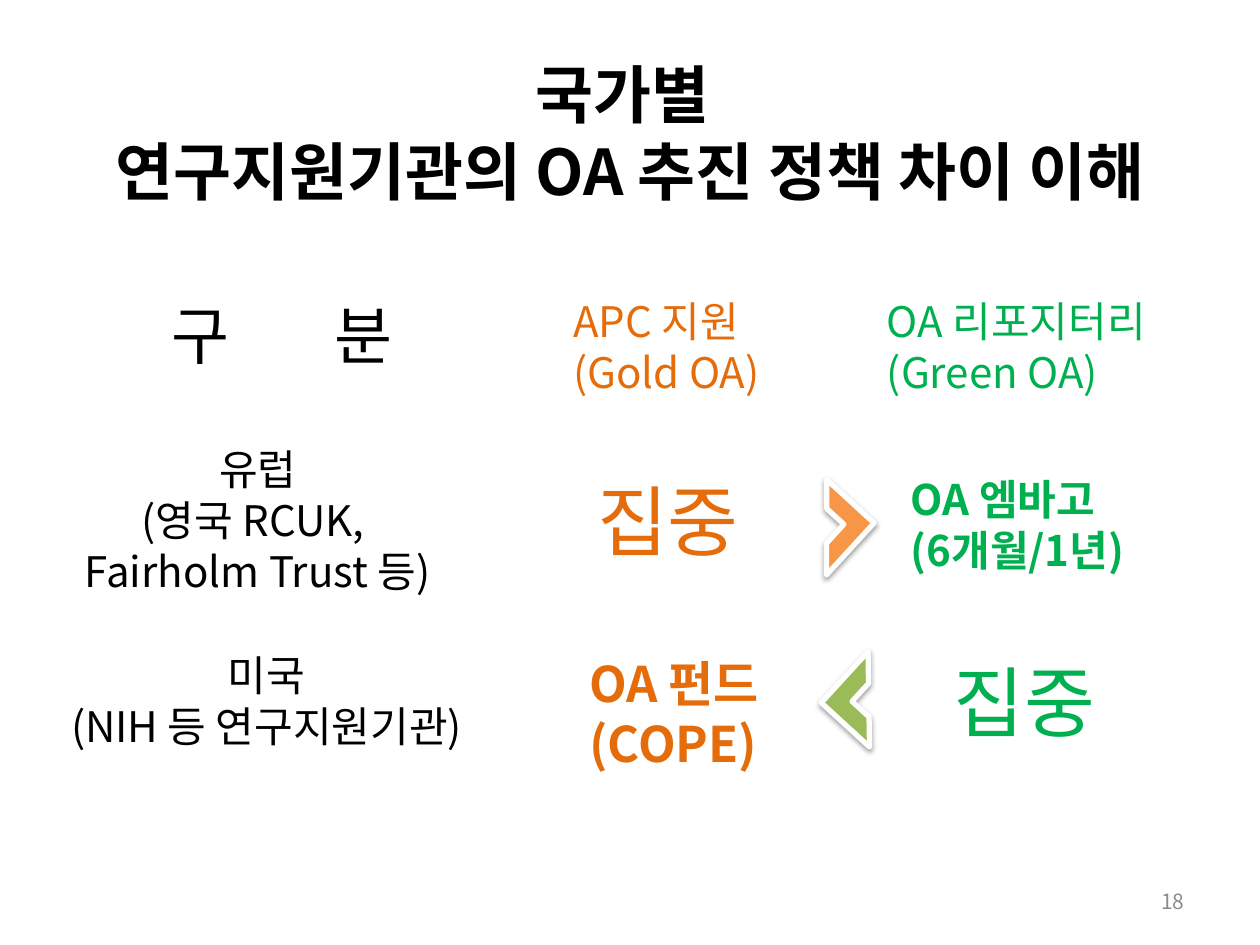
from dataclasses import dataclass

from lxml import etree
from pptx import Presentation
from pptx.dml.color import RGBColor
from pptx.enum import shapes, text
from pptx.oxml import ns
from pptx.util import Inches, Pt

FONT = "Noto Sans CJK KR"
LINE_HEIGHT = 1.22
COLORS = {
    "black": "000000",
    "gray": "8C8C8C",
    "gold": "E46C0A",
    "green": "00B050",
    "gold_arrow": "F79646",
    "green_arrow": "9BBB59",
    "white": "FFFFFF",
}
ALIGN = text.PP_ALIGN
ANCHOR = text.MSO_ANCHOR
HEADER_TOP, EUROPE_TOP, USA_TOP = 2.29, 3.7, 5.13


@dataclass
class Label:
    """A text box; each line is one paragraph."""

    box: tuple[float, float, float, float]
    lines: tuple[str, ...]
    color: str = "black"
    size: int = 24
    bold: bool = False
    align: ALIGN = ALIGN.LEFT
    anchor: ANCHOR = ANCHOR.TOP
    spacing: int = 0


@dataclass
class Chevron:
    """A rotated half frame that points to the favoured policy."""

    box: tuple[float, float, float, float]
    rotation: float
    color: str


LABELS = [
    Label((0, 0.3, 10, 1.48), ("국가별 \v연구지원기관의 OA 추진 정책 차이 이해",),
          size=36, bold=True, align=ALIGN.CENTER, anchor=ANCHOR.MIDDLE),
    Label((7.17, 6.95, 2.33, 0.4), ("18",), "gray", 12,
          align=ALIGN.RIGHT, anchor=ANCHOR.MIDDLE),
    Label((1.13, HEADER_TOP, 2.22, 0.71), ("구 분",), size=36,
          align=ALIGN.CENTER, spacing=26),
    Label((4.45, HEADER_TOP, 2.03, 0.91), ("APC 지원", "(Gold OA)"), "gold"),
    Label((6.94, HEADER_TOP, 2.54, 0.91), ("OA 리포지터리", "(Green OA)"), "green"),
    Label((0.22, 3.46, 3.65, 1.31), ("유럽", "(영국 RCUK, ", "Fairholm Trust 등)"),
          align=ALIGN.CENTER),
    Label((4.64, EUROPE_TOP, 1.64, 0.84), ("집중",), "gold", 44),
    Label((7.13, EUROPE_TOP, 1.99, 0.91), ("OA 엠바고", "(6개월/1년)"), "green", bold=True),
    Label((0.24, 5.1, 3.75, 0.91), ("미국", "(NIH 등 연구지원기관)"), align=ALIGN.CENTER),
    Label((4.58, USA_TOP, 1.7, 1.04), ("OA 펀드", "(COPE)"), "gold", 28, True),
    Label((7.47, USA_TOP, 1.55, 0.84), ("집중",), "green", 44),
]
CHEVRONS = [
    Chevron((6.28, 3.93, 0.56, 0.51), 132.5, "gold_arrow"),
    Chevron((6.62, 5.29, 0.55, 0.52), 312.5, "green_arrow"),
]


def rgb(name: str) -> RGBColor:
    """Return a named colour."""
    return RGBColor.from_string(COLORS[name])


def apply_format(target: object, values: dict) -> None:
    """Set each format value on the target."""
    for name, value in values.items():
        setattr(target, name, value)


def format_run(run, label: Label) -> None:
    """Give a run its font, size and colour."""
    apply_format(run.font, {"name": FONT, "size": Pt(label.size), "bold": label.bold})
    run.font.color.rgb = rgb(label.color)
    properties = run.font._element
    etree.SubElement(properties, ns.qn("a:ea"), typeface=FONT)


def draw_label(slide, label: Label) -> None:
    """Draw one text box."""
    frame = slide.shapes.add_textbox(*map(Inches, label.box)).text_frame
    apply_format(frame, {"word_wrap": True, "vertical_anchor": label.anchor})
    for index, line in enumerate(label.lines):
        paragraph = frame.paragraphs[0] if index == 0 else frame.add_paragraph()
        apply_format(paragraph, {
            "alignment": label.align,
            "line_spacing": Pt(label.size * LINE_HEIGHT),
        })
        if label.spacing:
            for part in (line[:-1], line[-1]):
                paragraph.add_run().text = part
            spaced = paragraph.runs[0].font._element
            spaced.set("spc", str(label.spacing * 100))
        else:
            paragraph.text = line
        for run in paragraph.runs:
            format_run(run, label)


def add_shadow(shape) -> None:
    """Add a soft shadow below a shape."""
    effects = etree.SubElement(shape._element.spPr, ns.qn("a:effectLst"))
    shadow = etree.SubElement(
        effects, ns.qn("a:outerShdw"), blurRad=str(Pt(3.1)), dist=str(Pt(1.6)),
        dir="5400000", rotWithShape="0")
    color = etree.SubElement(shadow, ns.qn("a:srgbClr"), val=COLORS["black"])
    etree.SubElement(color, ns.qn("a:alpha"), val="38000")


def draw_chevron(slide, chevron: Chevron) -> None:
    """Draw one chevron with a white outline."""
    shape = slide.shapes.add_shape(
        shapes.MSO_SHAPE.HALF_FRAME, *map(Inches, chevron.box))
    shape.rotation = chevron.rotation
    shape.fill.solid()
    shape.fill.fore_color.rgb = rgb(chevron.color)
    shape.line.color.rgb = rgb("white")
    shape.line.width = Pt(3)
    add_shadow(shape)


def main() -> None:
    """Build the slide on open access policies by country."""
    presentation = Presentation()
    apply_format(presentation, {"slide_width": Inches(10), "slide_height": Inches(7.5)})
    slide = presentation.slides.add_slide(presentation.slide_layouts[6])
    for label in LABELS:
        draw_label(slide, label)
    for chevron in CHEVRONS:
        draw_chevron(slide, chevron)
    presentation.save("out.pptx")


if __name__ == "__main__":
    main()
